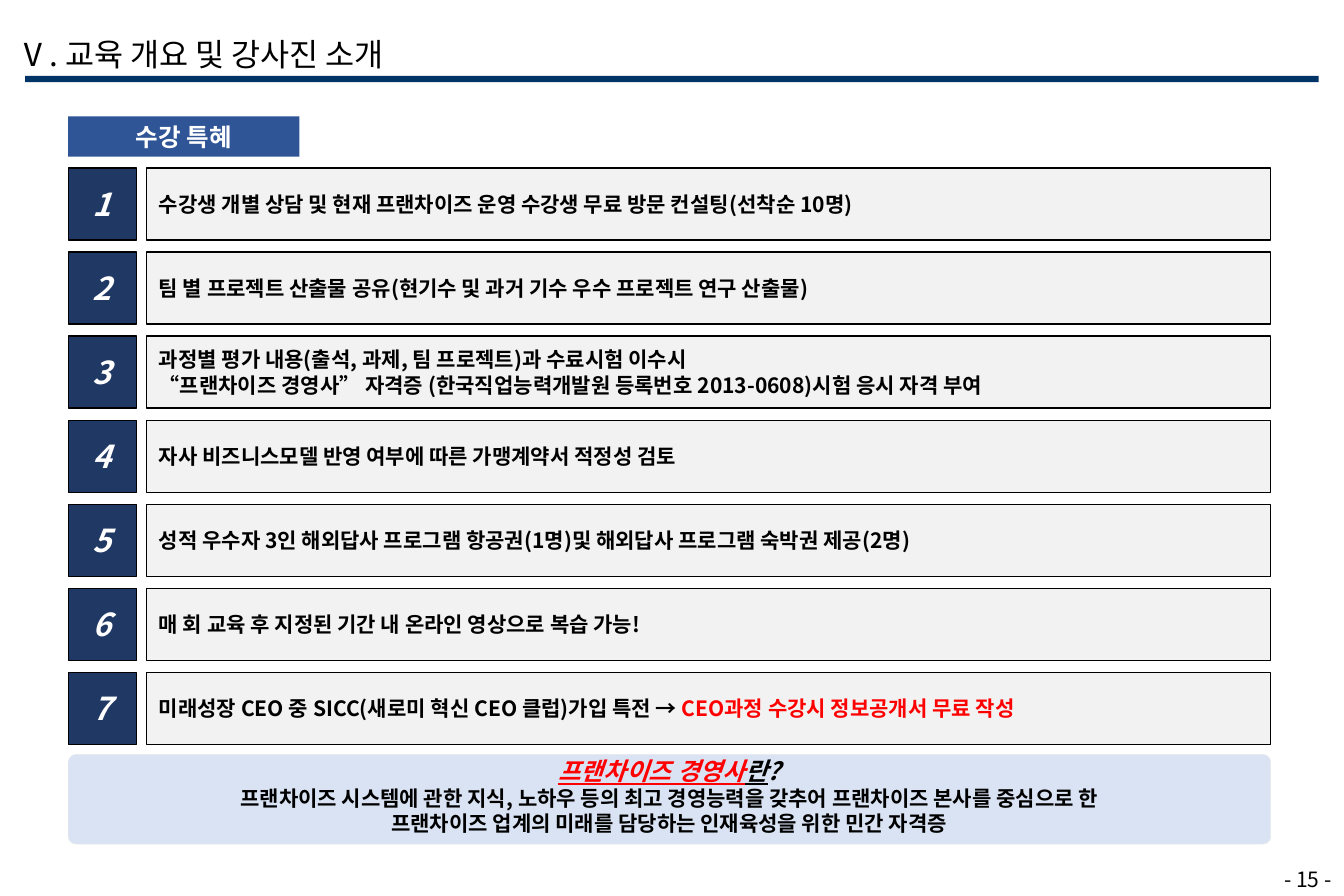
from lxml import etree
from pptx import Presentation, util as u
from pptx.dml.color import RGBColor
from pptx.enum import shapes, text
from pptx.oxml.ns import qn

FONT = "Noto Sans CJK KR"
BLACK = RGBColor(0x00, 0x00, 0x00)
WHITE = RGBColor(0xFF, 0xFF, 0xFF)
RED = RGBColor(0xFF, 0x00, 0x00)
RULE = RGBColor(0x00, 0x33, 0x66)
BLUE = RGBColor(0x2F, 0x55, 0x97)
NAVY = RGBColor(0x20, 0x38, 0x64)
GRAY = RGBColor(0xF2, 0xF2, 0xF2)
PALE = RGBColor(0xDA, 0xE3, 0xF3)
EDGE = RGBColor(0xEA, 0xEA, 0xEA)
RECT = shapes.MSO_SHAPE.RECTANGLE
ROUND = shapes.MSO_SHAPE.ROUNDED_RECTANGLE
LEFT, CENTER, RIGHT = text.PP_ALIGN.LEFT, text.PP_ALIGN.CENTER, text.PP_ALIGN.RIGHT
MIDDLE = text.MSO_ANCHOR.MIDDLE

MARGIN, CONTENT_W = 0.54, 9.52
NUMBER_W, GAP = 0.54, 0.08
TEXT_X = MARGIN + NUMBER_W + GAP
TEXT_W = CONTENT_W - NUMBER_W - GAP
TOP, PITCH, ROW_H = 1.33, 0.665, 0.57

BENEFITS = [
    [["수강생 개별 상담 및 현재 프랜차이즈 운영 수강생 무료 방문 컨설팅(선착순 10명)"]],
    [["팀 별 프로젝트 산출물 공유(현기수 및 과거 기수 우수 프로젝트 연구 산출물)"]],
    [["과정별 평가 내용(출석, 과제, 팀 프로젝트)과 수료시험 이수시"],
     ["“프랜차이즈 경영사” 자격증 (한국직업능력개발원 등록번호 2013-0608)시험 응시 자격 부여"]],
    [["자사 비즈니스모델 반영 여부에 따른 가맹계약서 적정성 검토"]],
    [["성적 우수자 3인 해외답사 프로그램 항공권(1명)및 해외답사 프로그램 숙박권 제공(2명)"]],
    [["매 회 교육 후 지정된 기간 내 온라인 영상으로 복습 가능!"]],
    [["미래성장 CEO 중 SICC(새로미 혁신 CEO 클럽)가입 특전 → ",
      "CEO과정 수강시 정보공개서 무료 작성"]],
]
SUMMARY = [
    ["프랜차이즈 경영사", "란", "?"],
    ["프랜차이즈 시스템에 관한 지식, 노하우 등의 최고 경영능력을 갖추어 프랜차이즈 본사를 중심으로 한"],
    ["프랜차이즈 업계의 미래를 담당하는 인재육성을 위한 민간 자격증"],
]


def add_box(kind, x, y, w, h, fill, line=None, width=0.75):
    sp = s.shapes.add_shape(kind, *(u.Inches(v) for v in (x, y, w, h)))
    sp.shadow.inherit = False
    sp.fill.solid()
    sp.fill.fore_color.rgb = fill
    if line is None:
        sp.line.fill.background()
    else:
        sp.line.color.rgb = line
        sp.line.width = u.Pt(width)
    return sp


def write(sp, lines, size, color=BLACK, bold=True, italic=False,
          align=LEFT, anchor=MIDDLE, wrap=False):
    tf = sp.text_frame
    tf.auto_size = text.MSO_AUTO_SIZE.NONE
    tf.word_wrap = wrap
    tf.vertical_anchor = anchor
    for i, runs in enumerate(lines):
        p = tf.add_paragraph() if i else tf.paragraphs[0]
        for words in runs:
            p.add_run().text = words
        p.alignment = align
        f = p.font
        f.name, f.size, f.bold, f.italic = FONT, u.Pt(size), bold, italic
        f.color.rgb = color
        latin = p._p.pPr.find(qn("a:defRPr")).find(qn("a:latin"))
        ea = etree.Element(qn("a:ea"), typeface=FONT)
        latin.addnext(ea)
    return tf


prs = Presentation()
prs.slide_width, prs.slide_height = u.Inches(10.64), u.Inches(7.09)
s = prs.slides.add_slide(prs.slide_layouts[5])

add_box(RECT, 0.2, 0.6, 10.24, 0.05, RULE)

title = s.shapes.title
title.left, title.top = u.Inches(0.04), u.Inches(0.23)
title.width, title.height = u.Inches(3.45), u.Inches(0.4)
write(title, [["Ⅴ. 교육 개요 및 강사진 소개"]], 18, bold=False,
      anchor=text.MSO_ANCHOR.TOP)

page = s.shapes.add_textbox(*(u.Inches(v) for v in (9.63, 6.83, 1.01, 0.26)))
write(page, [["- 15 -"]], 12, bold=False, align=RIGHT)

heading = add_box(RECT, MARGIN, 0.92, 1.83, 0.32, BLUE)
write(heading, [["수강 특혜"]], 14, WHITE, align=CENTER)

for i, lines in enumerate(BENEFITS):
    y = TOP + i * PITCH
    number = add_box(RECT, MARGIN, y, NUMBER_W, ROW_H, NAVY, BLACK)
    write(number, [[str(i + 1)]], 18, WHITE, italic=True, align=CENTER)
    benefit = add_box(RECT, TEXT_X, y, TEXT_W, ROW_H, GRAY, BLACK)
    tf = write(benefit, lines, 12)
    for r in tf.paragraphs[0].runs[1:]:
        r.font.color.rgb = RED

summary = add_box(ROUND, MARGIN, 5.97, CONTENT_W, 0.71, PALE, EDGE, 0.25)
summary.adjustments[0] = 0.085
tf = write(summary, SUMMARY, 12, align=CENTER,
           anchor=text.MSO_ANCHOR.BOTTOM, wrap=True)
question = tf.paragraphs[0]
question.font.size = u.Pt(14)
question.font.italic = True
term, particle, mark = question.runs
term.font.color.rgb = RED
term.font.underline = particle.font.underline = True

prs.save("out.pptx")
